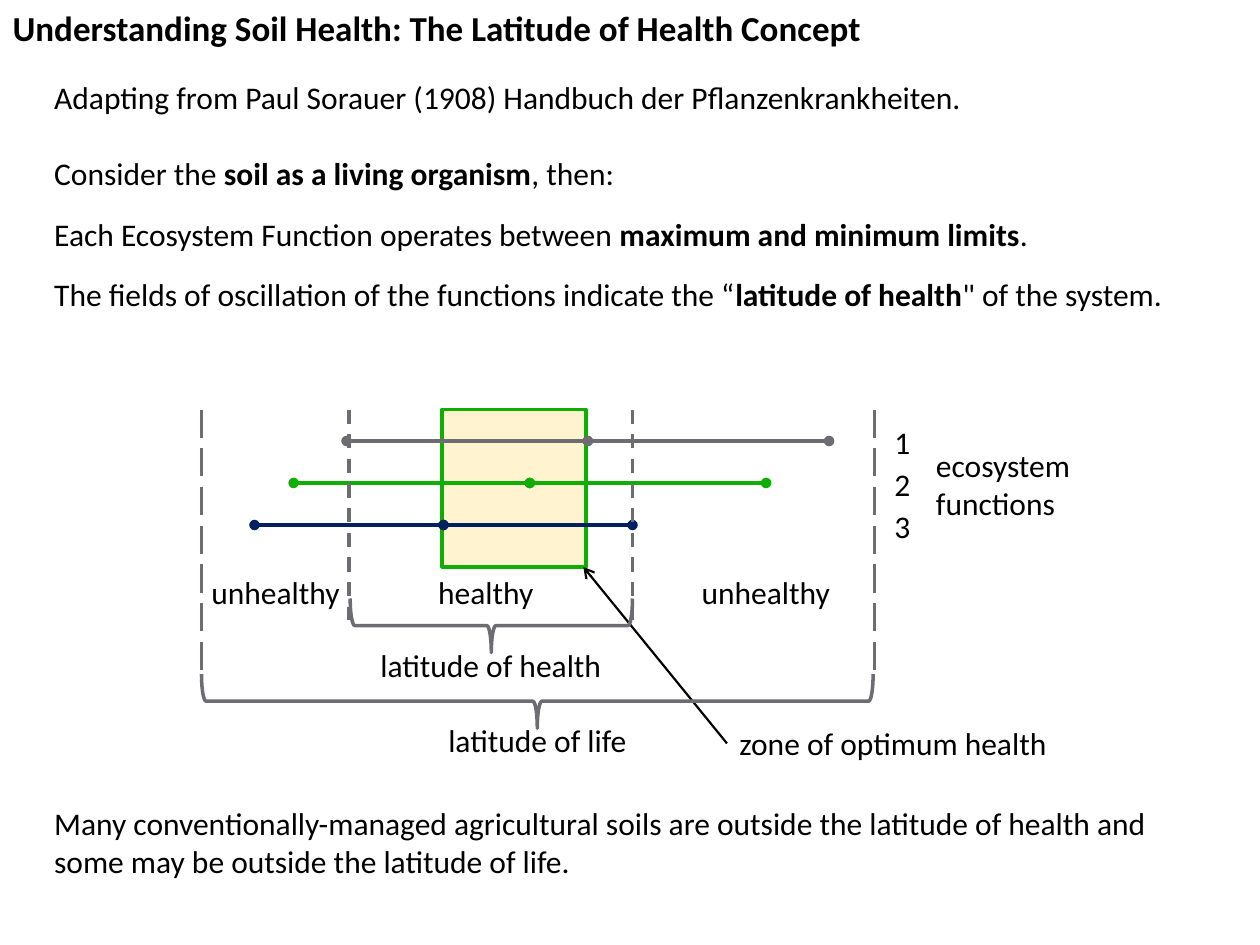
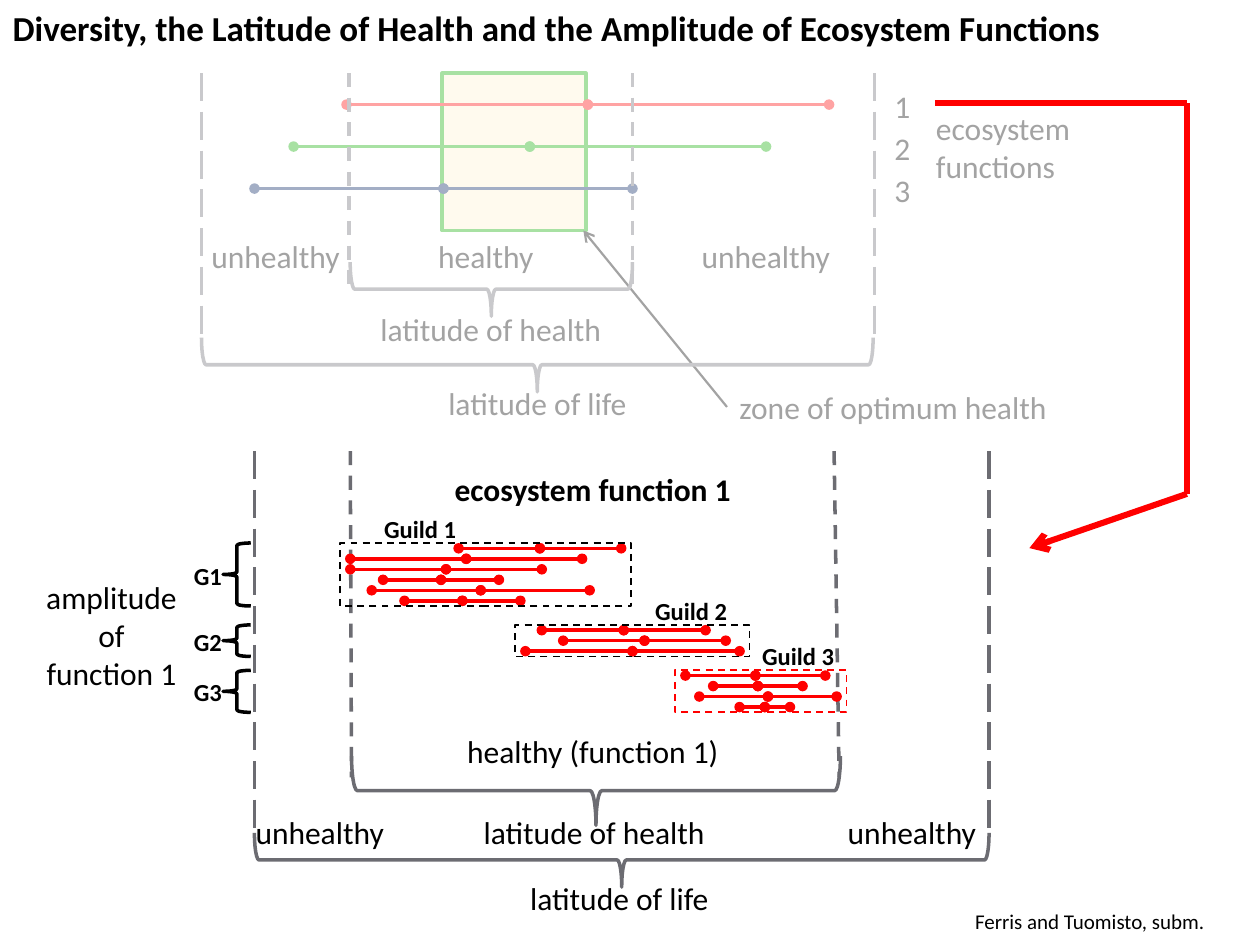
from lxml.etree import SubElement
from pptx import Presentation
from pptx.dml.color import RGBColor
from pptx.enum.dml import MSO_LINE
from pptx.enum.shapes import MSO_CONNECTOR, MSO_SHAPE
from pptx.enum.text import MSO_ANCHOR, MSO_AUTO_SIZE, PP_ALIGN
from pptx.oxml.ns import qn
from pptx.util import Inches, Pt

FONT = "Calibri"
BLACK, WHITE, GREY = "000000", "FFFFFF", "6C6C72"
RED, GREEN, NAVY, YELLOW = "FF0000", "0EAE02", "002060", "FFE38B"
COLUMNS, ROWS = 10, 7.5
COLUMN, ROW = Inches(10) / COLUMNS, Inches(7.5) / ROWS
GUILD_STEP = 1 / 12
GUILD_PADDING = 0.08

INTRODUCTION = [
    (0, ["Adapting from Paul Sorauer (1908) Handbuch der Pflanzenkrankheiten."]),
    (22, ["Consider the ", "soil as a living organism", ", then:"]),
    (12.8, ["Each Ecosystem Function operates between ", "maximum and minimum limits", "."]),
    (12.8, ["The fields of oscillation of the functions indicate the “",
            "latitude of health", "\" of the system."]),
    (281, ["Many conventionally-managed agricultural soils are outside the latitude "
           "of health and some may be outside the latitude of life."]),
]

GUILDS = [
    (4.31, 2.95, BLACK, [(3.64, 4.93), (2.78, 4.62), (2.78, 4.3),
                         (3.04, 3.96), (2.95, 4.68), (3.21, 4.13)]),
    (4.96, 5.1, BLACK, [(4.3, 5.6), (4.47, 5.76), (4.17, 5.87)]),
    (5.32, 5.95, RED, [(5.44, 6.55), (5.66, 6.37), (5.55, 6.64), (5.87, 6.27)]),
]


def color(hex_string):
    """Turn a hex string into a colour."""
    return RGBColor.from_string(hex_string)


def frame(left, top, width, height):
    """Turn grid columns and rows into slide lengths."""
    return (round(left * COLUMN), round(top * ROW),
            round(width * COLUMN), round(height * ROW))


def style_run(run, size, bold=False):
    """Format one run."""
    run.font.name = FONT
    run.font.size = Pt(size)
    run.font.bold = bold
    run.font.color.rgb = color(BLACK)


def style_line(line, hex_string, width, dash=None):
    """Format an outline or a connector line."""
    line.color.rgb = color(hex_string)
    line.width = Pt(width)
    if dash:
        line.dash_style = dash


def place(shape, left, top, width, height):
    """Move a placeholder onto the grid."""
    shape.left, shape.top, shape.width, shape.height = frame(left, top, width, height)
    shape.text_frame.auto_size = MSO_AUTO_SIZE.NONE


def set_title(slide, text, width):
    """Fill the title placeholder in the top left corner."""
    title = slide.shapes.title
    place(title, 0, 0, width, 0.44)
    text_frame = title.text_frame
    text_frame.text = text
    text_frame.word_wrap = False
    text_frame.vertical_anchor = MSO_ANCHOR.TOP
    paragraph = text_frame.paragraphs[0]
    paragraph.alignment = PP_ALIGN.LEFT
    style_run(paragraph.runs[0], 20, True)


def set_body(slide, entries):
    """Fill the body placeholder, with every second run bold."""
    body = slide.placeholders[1]
    place(body, 0.33, 0.57, 9.33, 6.51)
    for index, (space, pieces) in enumerate(entries):
        text_frame = body.text_frame
        paragraph = text_frame.add_paragraph() if index else text_frame.paragraphs[0]
        paragraph.space_before = Pt(space)
        properties = paragraph._p.get_or_add_pPr()
        properties.set("marL", "0")
        properties.set("indent", "0")
        SubElement(properties, qn("a:buNone"))
        for position, piece in enumerate(pieces):
            run = paragraph.add_run()
            run.text = piece
            style_run(run, 18, position % 2 == 1)


def add_label(shapes, text, left, top, width, size=18, bold=False, align=PP_ALIGN.LEFT):
    """Add an unwrapped label whose height follows its lines."""
    lines = text.count("\n") + 1
    height = 0.1 + lines * size / 59
    text_frame = shapes.add_textbox(*frame(left, top, width, height)).text_frame
    text_frame.text = text
    text_frame.word_wrap = False
    for paragraph in text_frame.paragraphs:
        paragraph.alignment = align
        for run in paragraph.runs:
            style_run(run, size, bold)


def add_line(shapes, start, end, hex_string, width=2, dash=None, head=None, tail=None):
    """Add a straight line with optional dashes and ends."""
    connector = shapes.add_connector(
        MSO_CONNECTOR.STRAIGHT, *frame(*start, *end))
    style_line(connector.line, hex_string, width, dash)
    outline = connector.line._get_or_add_ln()
    for tag, kind in (("a:headEnd", head), ("a:tailEnd", tail)):
        if kind:
            SubElement(outline, qn(tag)).set("type", kind)
    SubElement(connector._element.spPr, qn("a:effectLst"))


def add_range(shapes, left, right, y, hex_string):
    """Add a range line with dots at both limits and the middle."""
    middle = (left + right) / 2
    for start, end in ((left, middle), (middle, right)):
        add_line(shapes, (start, y), (end, y), hex_string, head="oval", tail="oval")


def add_box(shapes, area, fill=None, opacity=100, outline=None, width=2, dash=None):
    """Add a rectangle with an optional see-through fill and outline."""
    box = shapes.add_shape(MSO_SHAPE.RECTANGLE, *frame(*area))
    box.shadow.inherit = False
    if fill:
        box.fill.solid()
        box.fill.fore_color.rgb = color(fill)
        solid = box._element.spPr.find(qn("a:solidFill"))
        SubElement(solid[0], qn("a:alpha")).set("val", str(opacity * 1000))
    else:
        box.fill.background()
    if outline:
        style_line(box.line, outline, width, dash)
    else:
        box.line.fill.background()


def add_brace(shapes, area, hex_string):
    """Add a left brace."""
    brace = shapes.add_shape(MSO_SHAPE.LEFT_BRACE, *frame(*area))
    brace.shadow.inherit = False
    brace.fill.background()
    style_line(brace.line, hex_string, 2)
    return brace


def add_brace_below(shapes, left, right, top, depth=0.43):
    """Add a brace that lies under the span from left to right."""
    span = right - left
    area = ((left + right - depth) / 2, top + (depth - span) / 2, depth, span)
    add_brace(shapes, area, GREY).rotation = 270


def add_limits(shapes, limits, top, bottom, dash):
    """Add dashed limits, each given by its x at top and bottom."""
    for upper, lower in limits:
        add_line(shapes, (upper, top), (lower, bottom), GREY, dash=dash)


def add_concept(slide, top, first_color):
    """Draw the latitude of health diagram from a given row down."""
    shapes = slide.shapes.add_group_shape().shapes
    add_box(shapes, (3.51, top, 1.14, 1.25), YELLOW, 40, GREEN)
    add_line(shapes, (5.77, top + 2.65), (4.63, top + 1.25), BLACK, 1.25, tail="arrow")
    ranges = [(2.75, 6.58, first_color), (2.33, 6.08, GREEN), (2.02, 5.02, NAVY)]
    for index, (left, right, hex_string) in enumerate(ranges):
        add_range(shapes, left, right, top + 0.25 + index / 3, hex_string)
        add_label(shapes, str(index + 1), 7, top + 0.06 + index / 3, 0.33)
    add_limits(shapes, [(2.77, 2.77), (5.02, 5.02)], top, top + 1.67, MSO_LINE.DASH)
    add_limits(shapes, [(1.6, 1.6), (6.94, 6.94)], top, top + 2.11, MSO_LINE.LONG_DASH)
    add_brace_below(shapes, 2.78, 5.02, top + 1.5)
    add_brace_below(shapes, 1.6, 6.93, top + 2.1)
    for text, left, offset, width in (
            ("unhealthy", 1.58, 1.25, 1.23),
            ("healthy", 3.38, 1.25, 0.97),
            ("unhealthy", 5.47, 1.25, 1.23),
            ("latitude of health", 2.92, 1.83, 1.98),
            ("latitude of life", 3.46, 2.42, 1.64),
            ("zone of optimum health", 5.77, 2.45, 2.69),
            ("ecosystem\nfunctions", 7.33, 0.24, 1.28)):
        add_label(shapes, text, left, top + offset, width)


def add_guild(shapes, number, top, label_left, outline, ranges):
    """Draw one guild: its ranges, dashed frame, labels and brace."""
    height = len(ranges) * GUILD_STEP
    left = min(start for start, end in ranges) - GUILD_PADDING
    right = max(end for start, end in ranges) + GUILD_PADDING
    for index, (start, end) in enumerate(ranges):
        add_range(shapes, start, end, top + (index + 0.5) * GUILD_STEP, RED)
    add_box(shapes, (left, top, right - left, height),
            outline=outline, width=1, dash=MSO_LINE.DASH)
    add_label(shapes, f"Guild {number}", label_left, top - 0.28, 0.78, 14, True)
    add_brace(shapes, (1.77, top, 0.22, height), BLACK)
    add_label(shapes, f"G{number}", 1.44, top + height / 2 - 0.16, 0.43, 14, True)


def add_amplitude(slide):
    """Draw the amplitude diagram of the first ecosystem function."""
    shapes = slide.shapes.add_group_shape().shapes
    add_limits(shapes, [(2.78, 2.79), (6.62, 6.66)], 3.58, 6.17, MSO_LINE.DASH)
    add_limits(shapes, [(2.02, 2.02), (7.85, 7.85)], 3.58, 6.61, MSO_LINE.LONG_DASH)
    add_brace_below(shapes, 2.79, 6.67, 6, 0.55)
    add_brace_below(shapes, 2.02, 7.85, 6.61)
    add_label(shapes, "amplitude\nof\nfunction 1", 0.25, 4.54, 1.27, align=PP_ALIGN.CENTER)
    add_label(shapes, "ecosystem function 1", 3.51, 3.68, 2.39, bold=True)
    for text, left, top, width in (
            ("healthy (function 1)", 3.61, 5.76, 2.25),
            ("unhealthy", 1.93, 6.4, 1.23),
            ("latitude of health", 3.74, 6.4, 1.98),
            ("unhealthy", 6.63, 6.4, 1.23),
            ("latitude of life", 4.11, 6.93, 1.64)):
        add_label(shapes, text, left, top, width)
    for number, guild in enumerate(GUILDS, 1):
        add_guild(shapes, number, *guild)


def add_pointer(slide):
    """Lead from function 1 to its amplitude diagram."""
    shapes = slide.shapes.add_group_shape().shapes
    corners = [(7.42, 0.82), (9.42, 0.82), (9.42, 3.92), (8.17, 4.35)]
    for start, end in zip(corners, corners[1:]):
        tail = "arrow" if end == corners[-1] else None
        add_line(shapes, start, end, RED, 3.5, tail=tail)


def build_concept_slide(presentation):
    """Build the slide that explains the concept."""
    slide = presentation.slides.add_slide(presentation.slide_layouts[1])
    set_title(slide, "Understanding Soil Health: The Latitude of Health Concept", 7.06)
    set_body(slide, INTRODUCTION)
    add_concept(slide, 3.25, GREY)


def build_diversity_slide(presentation):
    """Build the slide that relates diversity to amplitude."""
    slide = presentation.slides.add_slide(presentation.slide_layouts[5])
    set_title(slide, "Diversity, the Latitude of Health and the Amplitude "
                     "of Ecosystem Functions", 8.84)
    add_amplitude(slide)
    add_concept(slide, 0.58, RED)
    add_box(slide.shapes, (0.5, 0.44, 8.83, 3), WHITE, 64)
    add_pointer(slide)
    add_label(slide.shapes, "Ferris and Tuomisto, subm.", 7.64, 7.16, 2.08, 12)


def main():
    """Build and save the presentation."""
    presentation = Presentation()
    presentation.slide_width = round(COLUMNS * COLUMN)
    presentation.slide_height = round(ROWS * ROW)
    build_concept_slide(presentation)
    build_diversity_slide(presentation)
    presentation.save("out.pptx")


if __name__ == "__main__":
    main()
